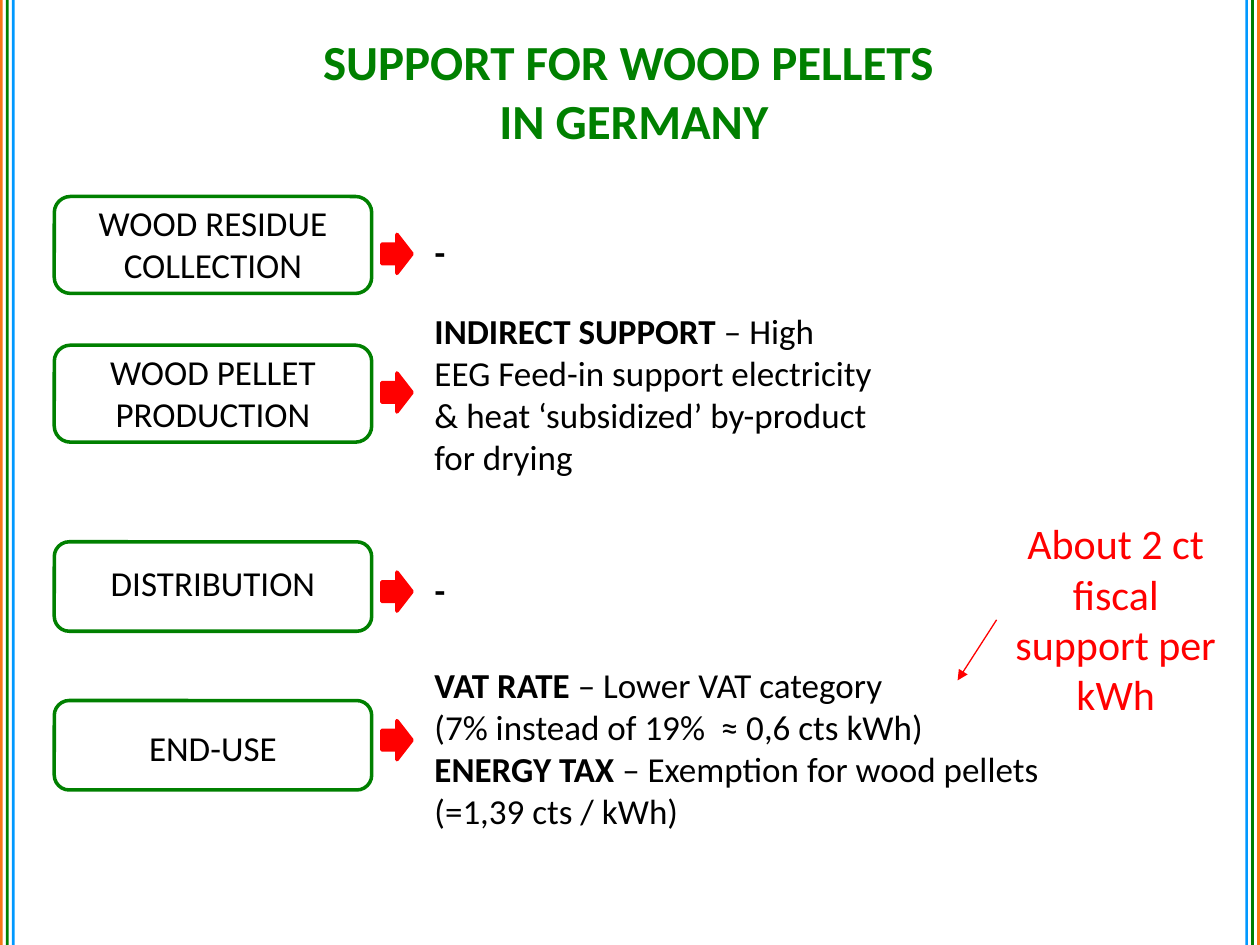
from dataclasses import dataclass

from lxml.etree import SubElement
from pptx import Presentation
from pptx.dml.color import RGBColor
from pptx.enum.shapes import MSO_CONNECTOR as Connector, MSO_SHAPE as Shape
from pptx.enum.text import MSO_ANCHOR as Anchor, MSO_AUTO_SIZE as AutoSize, PP_ALIGN as Align
from pptx.oxml.ns import qn
from pptx.util import Pt

COLORS = {
    "orange": "F67616",
    "green": "008000",
    "blue": "0099FF",
    "red": "FF0000",
    "black": "000000",
}
FONT = "Calibri"
SLIDE_WIDTH, SLIDE_HEIGHT = 720, 540
STRIPE_WIDTH = 1.6
STRIPES = {"orange": 0, "green": 3.4, "blue": 6.8}
STAGE_LEFT, STAGE_WIDTH = 31, 181.4
ARROW_LEFT, ARROW_WIDTH, ARROW_HEIGHT = 218.2, 17.3, 22.3
SUPPORT_LEFT = 241.2


@dataclass
class Piece:
    text: str
    bold: bool = False


@dataclass
class Stage:
    label: str
    top: float
    height: float
    label_top: float
    label_height: float
    arrow_top: float
    support_top: float
    support_width: float
    support_height: float
    support: list[list[Piece]]


STAGES = [
    Stage("WOOD RESIDUE COLLECTION", 112.3, 55.4, 111.6, 55.4, 133.9,
          128.2, 226.8, 31.7, [[Piece("-", True)]]),
    Stage("WOOD PELLET PRODUCTION", 197.3, 55.4, 196.6, 55.4, 213.1,
          173.5, 266.4, 104.4,
          [[Piece("INDIRECT SUPPORT", True),
            Piece(" – High EEG Feed-in support electricity & heat "
                  "‘subsidized’ by-product for drying")]]),
    Stage("DISTRIBUTION", 309.6, 51.1, 317.5, 31.7, 326.9,
          321.1, 217.4, 31.7, [[Piece("-", True)]]),
    Stage("END-USE", 400.3, 51.1, 411.8, 31.7, 411.8,
          375.8, 427, 104.4,
          [[Piece("VAT RATE ", True), Piece("– Lower VAT category")],
           [Piece("(7% instead of 19%  ≈ 0,6 cts kWh)")],
           [Piece("ENERGY TAX", True), Piece(" – Exemption for wood pellets")],
           [Piece("(=1,39 cts / kWh)")]]),
]


def color(name: str) -> RGBColor:
    return RGBColor.from_string(COLORS[name])


def format_font(font, size: float, color_name: str, bold: bool) -> None:
    font.name = FONT
    font.size = Pt(size)
    font.bold = bold
    font.color.rgb = color(color_name)


def add_shape(page, kind, left: float, top: float, width: float, height: float,
              fill: str | None = None, line: str | None = None):
    shape = page.shapes.add_shape(kind, Pt(left), Pt(top), Pt(width), Pt(height))
    shape.shadow.inherit = False
    if fill:
        shape.fill.solid()
        shape.fill.fore_color.rgb = color(fill)
    else:
        shape.fill.background()
    if line:
        shape.line.color.rgb = color(line)
        shape.line.width = Pt(2)
    else:
        shape.line.fill.background()
    return shape


def add_text(page, left: float, top: float, width: float, height: float,
             paragraphs: list[list[Piece]], size: float = 20,
             color_name: str = "black", align=Align.LEFT) -> None:
    box = page.shapes.add_textbox(Pt(left), Pt(top), Pt(width), Pt(height))
    frame = box.text_frame
    frame.word_wrap = True
    frame.auto_size = AutoSize.SHAPE_TO_FIT_TEXT
    for index, pieces in enumerate(paragraphs):
        para = frame.add_paragraph() if index else frame.paragraphs[0]
        para.alignment = align
        for piece in pieces:
            span = para.add_run()
            span.text = piece.text
            format_font(span.font, size, color_name, piece.bold)


def add_stripes(page) -> None:
    for name, offset in STRIPES.items():
        for left in (offset, SLIDE_WIDTH - STRIPE_WIDTH - offset):
            add_shape(page, Shape.RECTANGLE, left, 0, STRIPE_WIDTH, SLIDE_HEIGHT, fill=name)


def add_title(page) -> None:
    title = page.shapes.title
    title.left, title.top, title.width, title.height = Pt(56.2), Pt(26.6), Pt(612), Pt(50.4)
    frame = title.text_frame
    frame.text = "SUPPORT FOR WOOD PELLETS \vIN GERMANY"
    frame.vertical_anchor = Anchor.MIDDLE
    frame.auto_size = AutoSize.NONE
    para = frame.paragraphs[0]
    para.alignment = Align.CENTER
    for span in para.runs:
        format_font(span.font, 28, "green", True)


def add_stage(page, stage: Stage) -> None:
    add_shape(page, Shape.ROUNDED_RECTANGLE, STAGE_LEFT, stage.top,
              STAGE_WIDTH, stage.height, line="green")
    add_text(page, STAGE_LEFT, stage.label_top, STAGE_WIDTH, stage.label_height,
             [[Piece(stage.label)]], align=Align.CENTER)
    add_shape(page, Shape.RIGHT_ARROW, ARROW_LEFT, stage.arrow_top,
              ARROW_WIDTH, ARROW_HEIGHT, fill="red", line="red")
    add_text(page, SUPPORT_LEFT, stage.support_top, stage.support_width,
             stage.support_height, stage.support)


def add_pointer(page) -> None:
    pointer = page.shapes.add_connector(Connector.STRAIGHT, Pt(569.5), Pt(354.2),
                                        Pt(547.2), Pt(388.8))
    pointer.line.color.rgb = color("red")
    pointer.line.width = Pt(0.75)
    SubElement(pointer.line._get_or_add_ln(), qn("a:tailEnd"), type="triangle")
    SubElement(pointer._element.spPr, qn("a:effectLst"))


def main() -> None:
    deck = Presentation()
    deck.slide_width, deck.slide_height = Pt(SLIDE_WIDTH), Pt(SLIDE_HEIGHT)
    page = deck.slides.add_slide(deck.slide_layouts[5])
    add_stripes(page)
    add_title(page)
    for stage in STAGES:
        add_stage(page, stage)
    add_text(page, 569.5, 292.3, 136.1, 123.8,
             [[Piece("About 2 ct fiscal support per kWh")]],
             size=24, color_name="red", align=Align.CENTER)
    add_pointer(page)
    deck.save("out.pptx")


if __name__ == "__main__":
    main()
